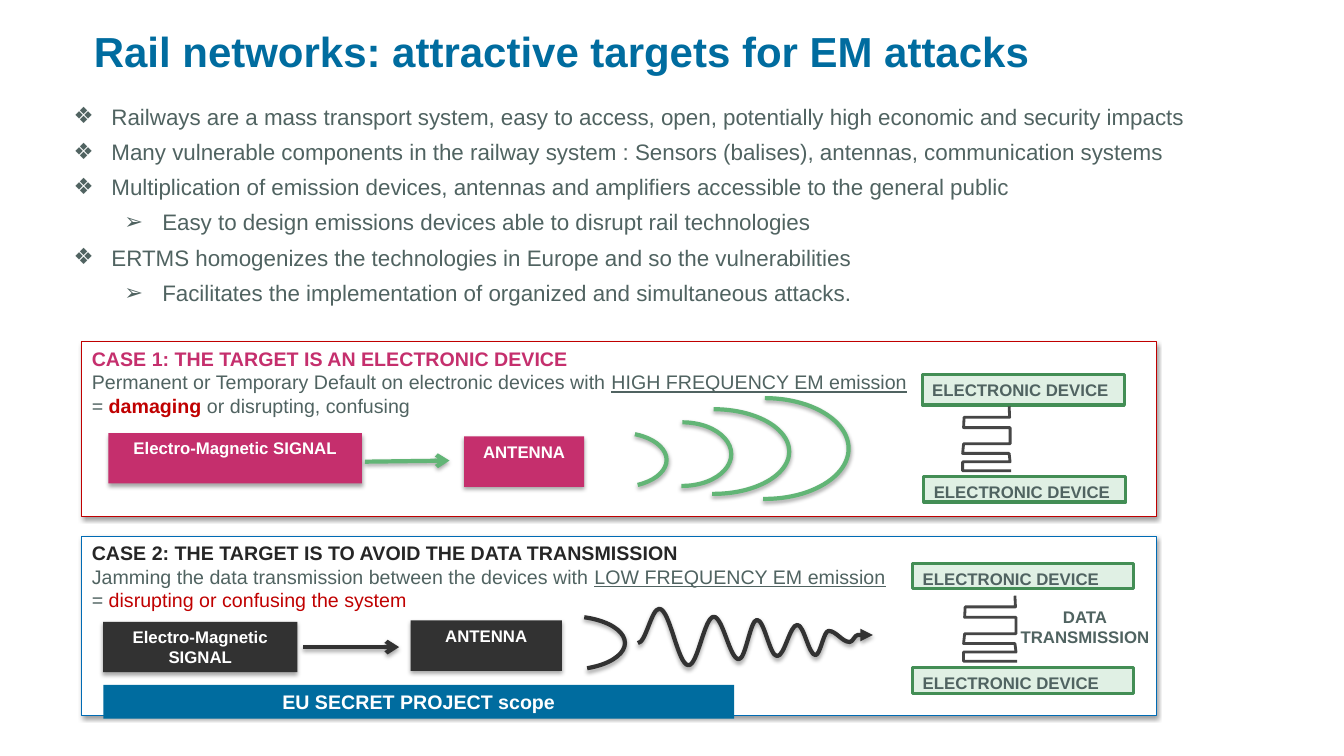
from dataclasses import dataclass

from lxml.etree import SubElement
from pptx import Presentation
from pptx.dml.color import RGBColor
from pptx.enum.shapes import MSO_CONNECTOR, MSO_SHAPE
from pptx.enum.text import MSO_ANCHOR, MSO_AUTO_SIZE, PP_ALIGN
from pptx.oxml.ns import qn
from pptx.util import Pt


@dataclass(frozen=True)
class Theme:
    font: str = "Arial"
    white: str = "FFFFFF"
    blue: str = "006C9F"
    edge: str = "006BB4"
    slate: str = "506361"
    pink: str = "C52F6D"
    red: str = "C00000"
    green: str = "62B576"
    mint: str = "E0F0E4"
    leaf: str = "438E55"
    black: str = "262626"
    dark: str = "323232"
    wire: str = "464646"
    head: int = 30
    list: int = 16
    body: int = 14
    label: int = 12


THEME = Theme()
COIL = [(0.96, 0), (0.97, 0.17), (0.03, 0.17), (0.02, 0.33), (0.98, 0.33),
        (0.98, 0.58), (0.02, 0.58), (0, 0.73), (0.96, 0.73), (0.98, 0.86),
        (0, 0.86), (0, 1), (1, 1)]
PEAKS = [(455.6, 459.4), (470.9, 434.9), (491.8, 475.2), (509.8, 440.6),
         (527.8, 470.9), (540.7, 442.8), (555.1, 468.7), (569.5, 446.4),
         (582.5, 468), (591.8, 450.7), (607, 458.6), (612.7, 453.6), (623.5, 453.6)]
POINTS = [
    (0, "Railways are a mass transport system, easy to access, open, potentially high economic and security impacts"),
    (0, "Many vulnerable components in the railway system : Sensors (balises), antennas, communication systems "),
    (0, "Multiplication of emission devices, antennas and amplifiers accessible to the general public"),
    (1, "Easy to design emissions devices able to disrupt rail technologies"),
    (0, "ERTMS homogenizes the technologies in Europe and so the vulnerabilities"),
    (1, "Facilitates the implementation of organized and simultaneous attacks."),
]


def color(code):
    return RGBColor.from_string(code)


def add_run(para, text, size, code, bold=False, under=False):
    run = para.add_run()
    run.text = text
    font = run.font
    font.name, font.size, font.bold, font.underline = THEME.font, Pt(size), bold, under
    font.color.rgb = color(code)


def set_frame(shape, anchor=MSO_ANCHOR.TOP):
    frame = shape.text_frame
    frame.word_wrap = True
    frame.auto_size = MSO_AUTO_SIZE.NONE
    frame.vertical_anchor = anchor
    return frame


def add_lines(frame, lines, align):
    for i, runs in enumerate(lines):
        para = frame.add_paragraph() if i else frame.paragraphs[0]
        para.alignment = align
        for run in runs:
            add_run(para, *run)


def place(shape, box):
    shape.left, shape.top, shape.width, shape.height = map(Pt, box)


def shade(shape, alpha=0, dist=1.8):
    effects = SubElement(shape.element.spPr, qn("a:effectLst"))
    if alpha:
        shadow = SubElement(effects, qn("a:outerShdw"), blurRad=str(Pt(3.1)),
                            dist=str(Pt(dist)), dir="5400000", rotWithShape="0")
        black = SubElement(shadow, qn("a:srgbClr"), val="000000")
        SubElement(black, qn("a:alpha"), val=str(alpha * 1000))


def stroke(shape, code, width, tip=None):
    line = shape.line
    line.color.rgb = color(code)
    line.width = Pt(width)
    if tip:
        SubElement(shape.element.spPr.find(qn("a:ln")), qn("a:tailEnd"), type=tip)


def add_title(slide, text):
    title = slide.shapes.title
    place(title, (67, 8, 682, 46.8))
    frame = set_frame(title, MSO_ANCHOR.BOTTOM)
    frame.margin_left = frame.margin_top = frame.margin_right = frame.margin_bottom = 0
    add_lines(frame, [[(text, THEME.head, THEME.blue, True)]], PP_ALIGN.LEFT)
    frame.paragraphs[0].line_spacing = 0.9


def add_list(slide, points):
    body = slide.placeholders[1]
    place(body, (45.4, 69.8, 869, 156.2))
    frame = set_frame(body)
    add_lines(frame, [[(text, THEME.list, THEME.slate)] for _, text in points],
              PP_ALIGN.JUSTIFY)
    for para, (level, _) in zip(frame.paragraphs, points):
        para.level = level
        props = para._p.get_or_add_pPr()
        props.set("marL", str(Pt(27 + 36.3 * level)))
        props.set("indent", str(Pt(-27)))
        SubElement(props, qn("a:buChar"), char="❖➢"[level])
        para.space_before = Pt(0)
        para.space_after = Pt(6)


def add_box(slide, box, fill, lines, edge=None, width=0, alpha=0, dist=1.8,
            align=PP_ALIGN.CENTER):
    shape = slide.shapes.add_shape(MSO_SHAPE.RECTANGLE, *map(Pt, box))
    shape.fill.solid()
    shape.fill.fore_color.rgb = color(fill)
    if edge:
        stroke(shape, edge, width)
    else:
        shape.line.fill.background()
    shade(shape, alpha, dist)
    add_lines(set_frame(shape), lines, align)


def add_panel(slide, top, height, edge, lines):
    add_box(slide, (58.5, top, 767.5, height), THEME.white, lines, edge, 0.75,
            38, 1.6, PP_ALIGN.LEFT)


def add_block(slide, box, fill, text):
    add_box(slide, box, fill, [[(text, THEME.label, THEME.white, True)]], alpha=35)


def add_device(slide, box):
    add_box(slide, box, THEME.mint,
            [[("ELECTRONIC DEVICE", THEME.label, THEME.slate, True)]],
            THEME.leaf, 2.25, align=PP_ALIGN.LEFT)


def add_arrow(slide, ends, code):
    arrow = slide.shapes.add_connector(MSO_CONNECTOR.STRAIGHT, *map(Pt, ends))
    stroke(arrow, code, 3, "arrow")
    shade(arrow, 35)


def add_arc(shapes, box, code, start, end):
    arc = shapes.add_shape(MSO_SHAPE.ARC, *map(Pt, box))
    arc.adjustments[0], arc.adjustments[1] = start, end
    arc.fill.background()
    stroke(arc, code, 3)
    shade(arc, 35)


def add_path(slide, points, code, width, tip=None, alpha=0):
    spots = [(Pt(x), Pt(y)) for x, y in points]
    pen = slide.shapes.build_freeform(*spots[0])
    pen.add_line_segments(spots[1:], close=False)
    path = pen.convert_to_shape()
    path.fill.background()
    stroke(path, code, width, tip)
    shade(path, alpha)
    return path


def add_coil(slide, left, top, width, height):
    mid, low = left + width / 2, top + height / 2
    points = [(mid + (0.5 - y) * height, low + (x - 0.5) * width) for x, y in COIL]
    add_path(slide, points, THEME.wire, 2).rotation = 270


def add_wave(slide, peaks):
    points = [peaks[0]]
    for (x, y), (right, low) in zip(peaks, peaks[1:]):
        bend = (right - x) * 0.37
        points += [(x + bend, y), (right - bend, low), (right, low)]
    wave = add_path(slide, points, THEME.dark, 3, "triangle", 35)
    route = next(wave.element.iter(qn("a:path")))
    lines = route.findall(qn("a:lnTo"))
    for i in range(0, len(lines), 3):
        curve = SubElement(route, qn("a:cubicBezTo"))
        for line in lines[i:i + 3]:
            curve.append(line[0])
            route.remove(line)


def add_note(slide, box, words):
    note = slide.shapes.add_textbox(*map(Pt, box))
    add_lines(set_frame(note), [[(word, THEME.label, THEME.slate, True)] for word in words],
              PP_ALIGN.CENTER)


def add_first(slide):
    t = THEME
    add_panel(slide, 244.1, 124.6, t.red, [
        [("CASE 1: THE TARGET IS AN ELECTRONIC DEVICE", t.body, t.pink, True)],
        [("Permanent or Temporary Default on electronic devices with ", t.body, t.slate),
         ("HIGH FREQUENCY EM emission", t.body, t.slate, False, True)],
        [("= ", t.body, t.slate), ("damaging", t.body, t.red, True),
         (" or disrupting, confusing", t.body, t.slate)]])
    add_block(slide, (77.5, 309.4, 181, 36), t.pink, "Electro-Magnetic SIGNAL")
    add_block(slide, (331.5, 311.8, 85.7, 36), t.pink, "ANTENNA")
    add_arrow(slide, (260.6, 329.8, 321.1, 329), t.green)
    add_arc(slide.shapes, (408.5, 309.1, 67.7, 38.9), t.green, 180.86, 32.16)
    group = slide.shapes.add_group_shape()
    for box in [(452.6, 301.7, 69.8, 45.4), (455.8, 292.3, 108, 60.5),
                (486.7, 284.4, 119.5, 72)]:
        add_arc(group.shapes, box, t.green, 162, 55.23)
    add_device(slide, (659.9, 340.6, 144.3, 18))
    add_device(slide, (658.8, 267.8, 144.4, 21.6))
    add_coil(slide, 687.6, 290.2, 34.6, 46.1)


def add_second(slide):
    t = THEME
    add_panel(slide, 383, 128.2, t.edge, [
        [("CASE 2: THE TARGET IS TO AVOID THE DATA TRANSMISSION", t.body, t.black, True)],
        [("Jamming the data transmission between the devices with ", t.body, t.slate),
         ("LOW FREQUENCY EM emission", t.body, t.slate, False, True)],
        [("= ", t.body, t.slate), ("disrupting or confusing the system", t.body, t.red)]])
    add_block(slide, (73.7, 444.2, 138.7, 36), t.dark, "Electro-Magnetic SIGNAL")
    add_block(slide, (293.4, 443.2, 108, 36), t.dark, "ANTENNA")
    add_arrow(slide, (216.7, 462.2, 285.1, 462.2), t.dark)
    add_arc(slide.shapes, (365.8, 440.2, 80.6, 38.2), t.dark, 180.86, 32.16)
    add_wave(slide, PEAKS)
    add_note(slide, (696.2, 429.8, 157.7, 36), ["DATA", "TRANSMISSION"])
    add_coil(slide, 688.3, 425.5, 38.2, 46.8)
    add_box(slide, (73.8, 489.2, 450.7, 24.2), t.blue,
            [[("EU SECRET PROJECT scope", t.body, t.white, True)]])
    for top in (477.1, 402.5):
        add_device(slide, (652, top, 157.7, 18.2))


def main():
    deck = Presentation()
    deck.slide_width, deck.slide_height = Pt(960), Pt(540)
    slide = deck.slides.add_slide(deck.slide_layouts[1])
    add_title(slide, "Rail networks: attractive targets for EM attacks")
    add_list(slide, POINTS)
    add_first(slide)
    add_second(slide)
    deck.save("out.pptx")


if __name__ == "__main__":
    main()
